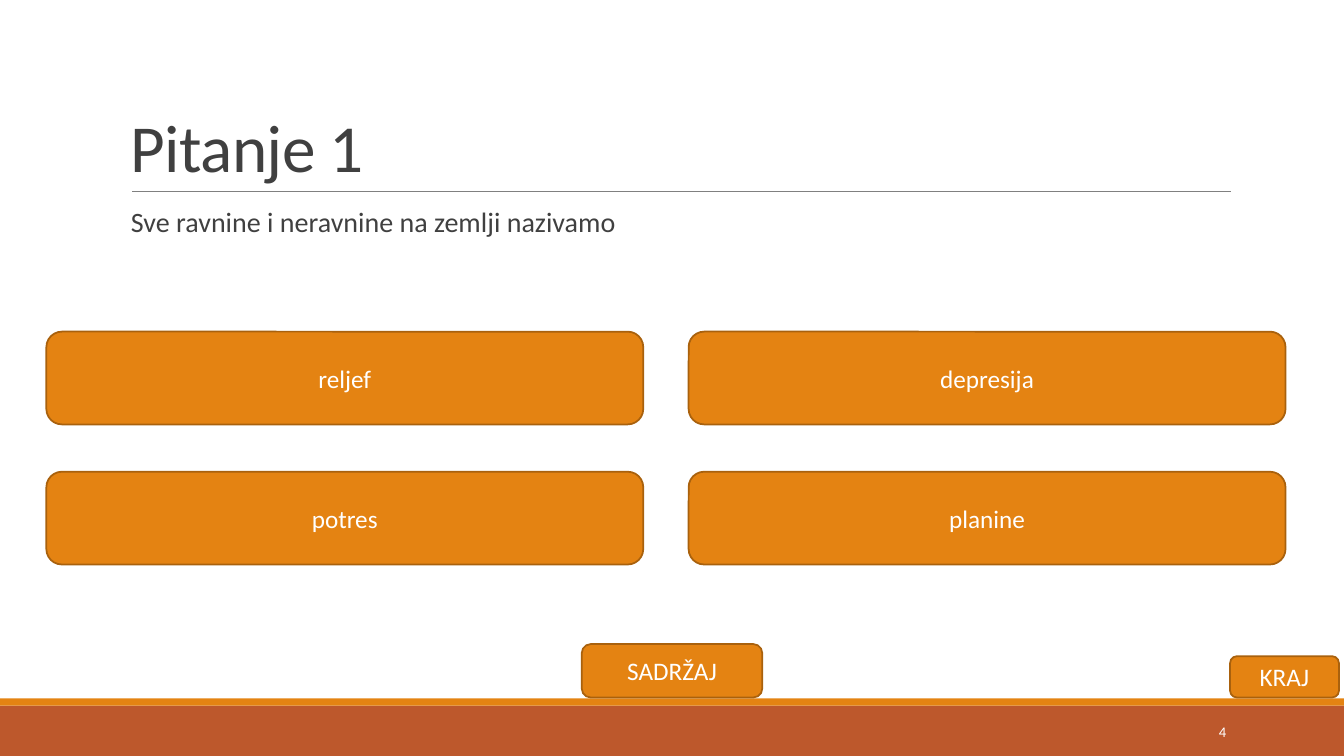
from dataclasses import dataclass

from pptx import Presentation
from pptx.dml.color import RGBColor
from pptx.enum.shapes import MSO_CONNECTOR, MSO_SHAPE
from pptx.enum.text import MSO_ANCHOR, PP_ALIGN
from pptx.oxml.ns import qn
from pptx.slide import Slide
from pptx.util import Emu, Pt

RECTANGLE = MSO_SHAPE.RECTANGLE
ROUNDED = MSO_SHAPE.ROUNDED_RECTANGLE
STRAIGHT = MSO_CONNECTOR.STRAIGHT
TOP, MIDDLE, BOTTOM = MSO_ANCHOR.TOP, MSO_ANCHOR.MIDDLE, MSO_ANCHOR.BOTTOM
LEFT, CENTER, RIGHT = PP_ALIGN.LEFT, PP_ALIGN.CENTER, PP_ALIGN.RIGHT

EMU_PER_PX = 9144
SLIDE_WIDTH, SLIDE_HEIGHT = 1333, 750


@dataclass(frozen=True)
class Theme:
    font: str = "Calibri"
    orange: str = "E48312"
    outline: str = "A9610D"
    rust: str = "BD582C"
    gray: str = "808080"
    dark: str = "404040"
    white: str = "FFFFFF"
    title_size: float = 48
    question_size: float = 20
    button_size: float = 18
    number_size: float = 10.5


THEME = Theme()


@dataclass(frozen=True)
class Area:
    left: int
    top: int
    width: int
    height: int

    def emu(self) -> tuple[Emu, Emu, Emu, Emu]:
        return px(self.left), px(self.top), px(self.width), px(self.height)


@dataclass(frozen=True)
class Band:
    area: Area
    color: str


@dataclass(frozen=True)
class Button:
    text: str
    area: Area


@dataclass(frozen=True)
class Label:
    text: str
    area: Area
    size: float
    color: str = THEME.dark
    align: PP_ALIGN = LEFT
    anchor: MSO_ANCHOR = TOP
    line_spacing: float = 1.0
    space_before: int = 0
    space_after: int = 0
    tracking: int = 0


BANDS = (
    Band(Area(0, 700, SLIDE_WIDTH, 50), THEME.rust),
    Band(Area(0, 693, SLIDE_WIDTH, 7), THEME.orange),
)
LABELS = (
    Label("Pitanje 1", Area(120, 31, 1100, 159), THEME.title_size,
          anchor=BOTTOM, line_spacing=0.85, tracking=-50),
    Label("Sve ravnine i neravnine na zemlji nazivamo", Area(120, 202, 1100, 67),
          THEME.question_size, line_spacing=0.9, space_before=12, space_after=2),
    Label("4", Area(1083, 706, 143, 40), THEME.number_size,
          color=THEME.white, align=RIGHT, anchor=MIDDLE),
)
ANSWERS = (("reljef", "depresija"), ("potres", "planine"))
FIRST_ANSWER = Area(46, 329, 592, 92)
COLUMN_STEP, ROW_STEP = 637, 139
NAVIGATION = (
    Button("KRAJ", Area(1220, 651, 108, 41)),
    Button("SADRŽAJ", Area(577, 639, 179, 53)),
)


def px(length: int) -> Emu:
    return Emu(length * EMU_PER_PX)


def rgb(color: str) -> RGBColor:
    return RGBColor.from_string(color)


def answer_buttons() -> list[Button]:
    first = FIRST_ANSWER
    return [
        Button(text, Area(first.left + column * COLUMN_STEP, first.top + row * ROW_STEP,
                          first.width, first.height))
        for row, texts in enumerate(ANSWERS)
        for column, text in enumerate(texts)
    ]


def write(shape, label: Label) -> None:
    frame = shape.text_frame
    frame.word_wrap = True
    frame.vertical_anchor = label.anchor
    para = frame.paragraphs[0]
    para.alignment = label.align
    para.line_spacing = label.line_spacing
    para.space_before = Pt(label.space_before)
    para.space_after = Pt(label.space_after)
    para.font.name = THEME.font
    para.font.size = Pt(label.size)
    para.font.color.rgb = rgb(label.color)
    span = para.add_run()
    span.text = label.text
    if label.tracking:
        span._r.get_or_add_rPr().set("spc", str(label.tracking))


def draw_label(page: Slide, label: Label) -> None:
    write(page.shapes.add_textbox(*label.area.emu()), label)


def draw_band(page: Slide, band: Band) -> None:
    shape = page.shapes.add_shape(RECTANGLE, *band.area.emu())
    shape.shadow.inherit = False
    shape.fill.solid()
    shape.fill.fore_color.rgb = rgb(band.color)
    shape.line.fill.background()


def draw_button(page: Slide, button: Button) -> None:
    shape = page.shapes.add_shape(ROUNDED, *button.area.emu())
    shape.shadow.inherit = False
    shape.fill.solid()
    shape.fill.fore_color.rgb = rgb(THEME.orange)
    shape.line.color.rgb = rgb(THEME.outline)
    shape.line.width = Pt(1.25)
    write(shape, Label(button.text, button.area, THEME.button_size,
                       color=THEME.white, align=CENTER, anchor=MIDDLE))


def draw_title_rule(page: Slide) -> None:
    rule = page.shapes.add_connector(STRAIGHT, px(131), px(190), px(1221), px(190))
    rule.line.color.rgb = rgb(THEME.gray)
    rule.line.width = Pt(0.5)
    properties = rule._element.spPr
    properties.append(properties.makeelement(qn("a:effectLst"), {}))


def main() -> None:
    """Build the quiz question slide and save it."""
    deck = Presentation()
    deck.slide_width, deck.slide_height = px(SLIDE_WIDTH), px(SLIDE_HEIGHT)
    page = deck.slides.add_slide(deck.slide_layouts[6])
    for band in BANDS:
        draw_band(page, band)
    draw_title_rule(page)
    for label in LABELS:
        draw_label(page, label)
    for button in (*answer_buttons(), *NAVIGATION):
        draw_button(page, button)
    deck.save("out.pptx")


if __name__ == "__main__":
    main()
